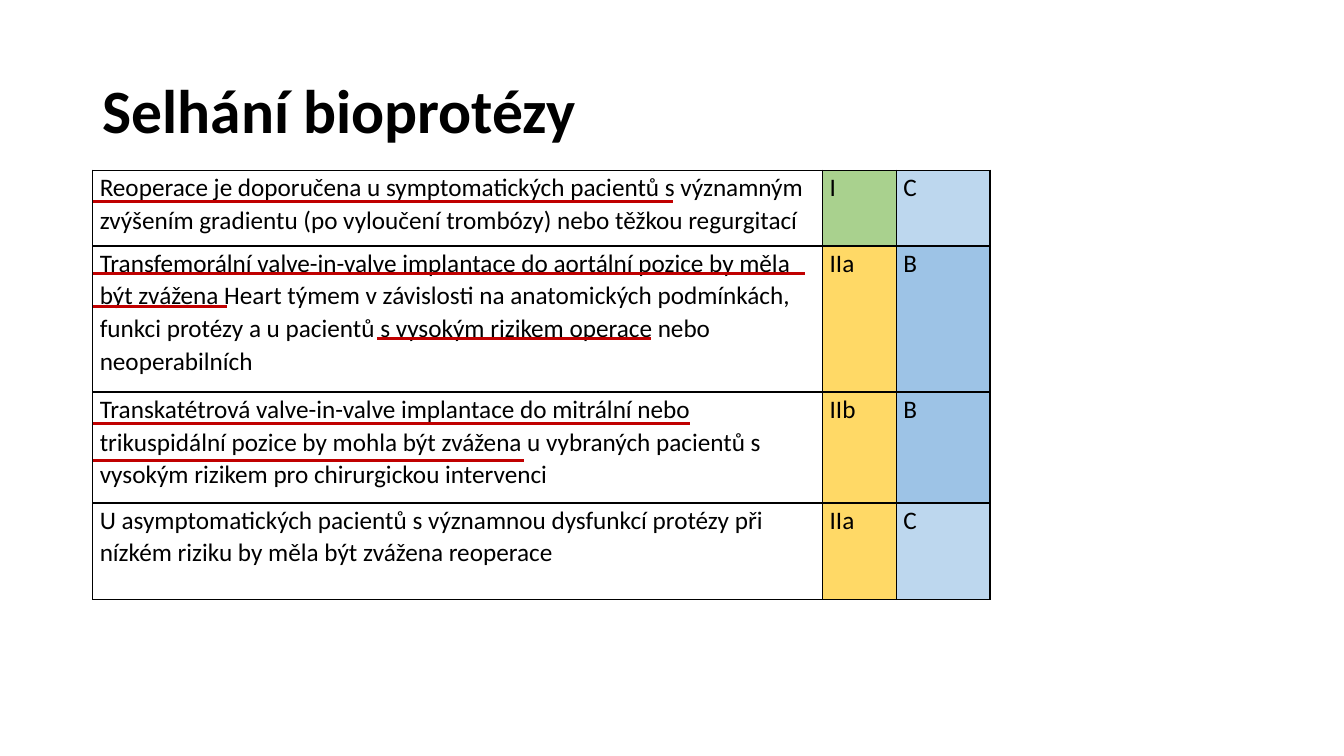
from dataclasses import dataclass

from lxml.etree import SubElement
from pptx import Presentation
from pptx.dml.color import RGBColor
from pptx.enum.shapes import MSO_CONNECTOR
from pptx.enum.text import MSO_ANCHOR, MSO_AUTO_SIZE, PP_ALIGN
from pptx.oxml import parse_xml
from pptx.oxml.ns import nsdecls, qn
from pptx.slide import Slide
from pptx.table import _Cell as Cell
from pptx.text.text import _Paragraph as Paragraph
from pptx.util import Inches, Pt

WIDTH, HEIGHT = 13.33, 7.5
FONT = "Calibri"
COLORS = {
    "text": "000000",
    "underline": "C00000",
    "I": "A9D18E",
    "IIa": "FFD966",
    "IIb": "FFD966",
    "B": "9DC3E6",
    "C": "BDD7EE",
}

# Horizontal and vertical lengths are percentages of the slide's size.
LEFT = 6.9
TABLE_TOP = 22.53
COLUMN_WIDTHS = (54.31, 5.48, 6.98)


@dataclass(frozen=True)
class Recommendation:
    text: str
    grade: str
    evidence: str
    height: float


@dataclass(frozen=True)
class Underline:
    y: float
    end: float
    start: float = LEFT


RECOMMENDATIONS = (
    Recommendation(
        "Reoperace je doporučena u symptomatických pacientů s významným "
        "zvýšením gradientu (po vyloučení trombózy) nebo těžkou regurgitací",
        "I", "C", 10),
    Recommendation(
        "Transfemorální valve-in-valve implantace do aortální pozice by měla "
        "být zvážena Heart týmem v závislosti na anatomických podmínkách, "
        "funkci protézy a u pacientů s vysokým rizikem operace nebo "
        "neoperabilních",
        "IIa", "B", 19.33),
    Recommendation(
        "Transkatétrová valve-in-valve implantace do mitrální nebo "
        "trikuspidální pozice by mohla být zvážena u vybraných pacientů "
        "s vysokým rizikem pro chirurgickou intervenci",
        "IIb", "B", 14.67),
    Recommendation(
        "U asymptomatických pacientů s významnou dysfunkcí protézy při "
        "nízkém riziku by měla být zvážena reoperace",
        "IIa", "C", 12.8),
)

UNDERLINES = (
    Underline(26.67, 50.04),
    Underline(36.13, 59.86),
    Underline(40.53, 16.88),
    Underline(56, 51.31),
    Underline(60.93, 39.01),
    Underline(44.8, 48.46, start=28.06),
)


def across(percent: float) -> int:
    return Inches(WIDTH * percent / 100)


def down(percent: float) -> int:
    return Inches(HEIGHT * percent / 100)


def color(name: str) -> RGBColor:
    return RGBColor.from_string(COLORS[name])


def format_text(p: Paragraph, size: int, spacing: float, bold: bool = False) -> None:
    p.alignment = PP_ALIGN.LEFT
    p.line_spacing = spacing
    for r in p.runs:
        r.font.name = FONT
        r.font.size = Pt(size)
        r.font.bold = bold
        r.font.color.rgb = color("text")


def add_title(slide: Slide, text: str) -> None:
    sp = slide.shapes.title
    sp.left, sp.top = across(LEFT), down(5.33)
    sp.width, sp.height = across(86.27), down(19.33)
    tf = sp.text_frame
    tf.text = text
    tf.auto_size = MSO_AUTO_SIZE.NONE
    tf.vertical_anchor = MSO_ANCHOR.MIDDLE
    format_text(tf.paragraphs[0], 44, 0.9, bold=True)


def add_borders(cell: Cell) -> None:
    """Draw all four borders; they must precede the fill in the cell's XML."""
    tcPr = cell._tc.get_or_add_tcPr()
    for i, side in enumerate(("lnL", "lnR", "lnT", "lnB")):
        tcPr.insert(i, parse_xml(
            f'<a:{side} {nsdecls("a")} w="{Pt(1)}"><a:solidFill>'
            f'<a:srgbClr val="{COLORS["text"]}"/></a:solidFill></a:{side}>'))


def fill_cell(cell: Cell, text: str) -> None:
    cell.text = text
    cell.margin_left = cell.margin_right = Inches(0.07)
    cell.margin_top = cell.margin_bottom = 0
    cell.vertical_anchor = MSO_ANCHOR.TOP
    format_text(cell.text_frame.paragraphs[0], 18, 1.07)
    if text in COLORS:
        cell.fill.solid()
        cell.fill.fore_color.rgb = color(text)
    else:
        cell.fill.background()
    add_borders(cell)


def add_recommendations(slide: Slide) -> None:
    table = slide.shapes.add_table(
        len(RECOMMENDATIONS), len(COLUMN_WIDTHS), across(LEFT), down(TABLE_TOP),
        across(sum(COLUMN_WIDTHS)),
        down(sum(item.height for item in RECOMMENDATIONS))).table
    table.first_row = table.horz_banding = False
    for column, width in zip(table.columns, COLUMN_WIDTHS):
        column.width = across(width)
    for row, item in zip(table.rows, RECOMMENDATIONS):
        row.height = down(item.height)
        for cell, text in zip(row.cells, (item.text, item.grade, item.evidence)):
            fill_cell(cell, text)


def add_underline(slide: Slide, underline: Underline) -> None:
    y = down(underline.y)
    line = slide.shapes.add_connector(
        MSO_CONNECTOR.STRAIGHT, across(underline.start), y, across(underline.end), y)
    line.line.color.rgb = color("underline")
    line.line.width = Pt(2.25)
    SubElement(line._element.spPr, qn("a:effectLst"))


def main() -> None:
    prs = Presentation()
    prs.slide_width, prs.slide_height = Inches(WIDTH), Inches(HEIGHT)
    slide = prs.slides.add_slide(prs.slide_layouts.get_by_name("Title Only"))
    add_title(slide, "Selhání bioprotézy")
    add_recommendations(slide)
    for underline in UNDERLINES:
        add_underline(slide, underline)
    prs.save("out.pptx")


if __name__ == "__main__":
    main()
